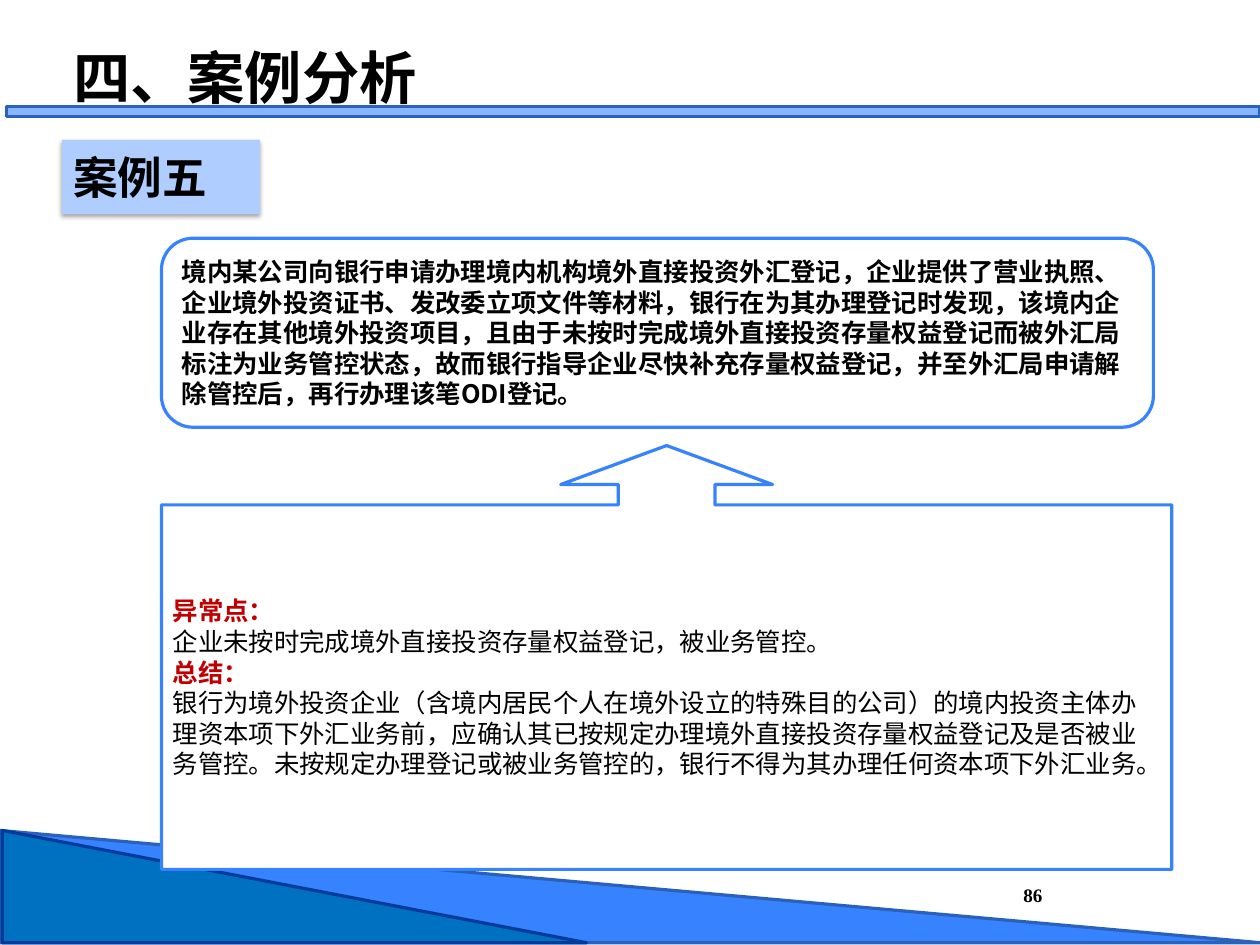
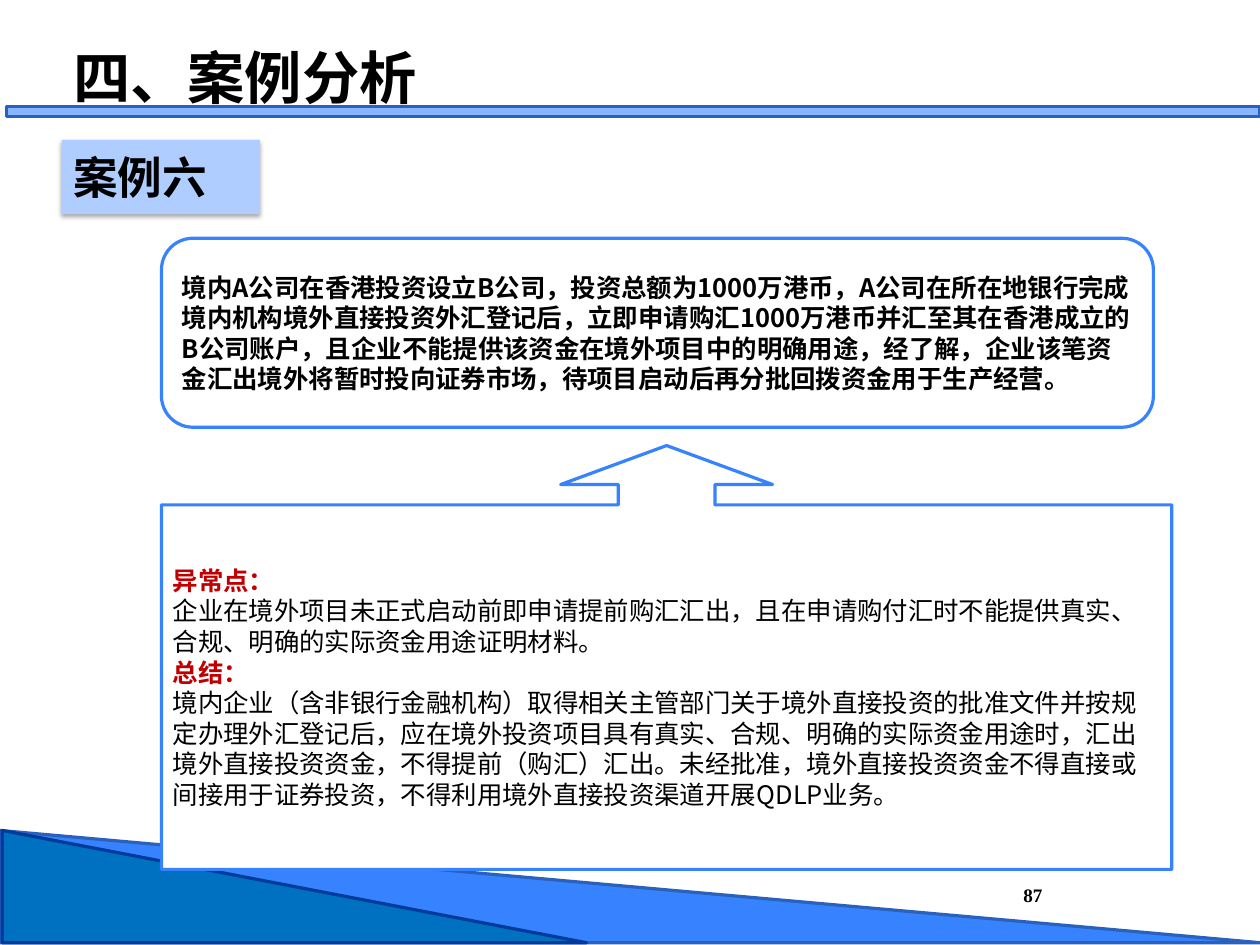
import pptx
import pptx.dml.color
import pptx.enum.shapes
import pptx.enum.text
import pptx.oxml.ns
import pptx.util
from lxml import etree

RGBColor = pptx.dml.color.RGBColor
Inches = pptx.util.Inches
Pt = pptx.util.Pt
MSO_SHAPE = pptx.enum.shapes.MSO_SHAPE
PP_ALIGN = pptx.enum.text.PP_ALIGN
MSO_ANCHOR = pptx.enum.text.MSO_ANCHOR
qn = pptx.oxml.ns.qn

BLACK = RGBColor(0x00, 0x00, 0x00)
WHITE = RGBColor(0xFF, 0xFF, 0xFF)
RED = RGBColor(0xC0, 0x00, 0x00)
BLUE = RGBColor(0x37, 0x83, 0xFF)
BLUE_EDGE = RGBColor(0x29, 0x61, 0xBD)
DEEP = RGBColor(0x00, 0x70, 0xC0)
DEEP_EDGE = RGBColor(0x00, 0x3B, 0x9B)
BAR = RGBColor(0x87, 0xB5, 0xFF)
TAG = RGBColor(0xAF, 0xCD, 0xFF)

SANS = "Noto Sans CJK SC"
SERIF = "Times New Roman"

TITLE = "四、案例分析"
CASES = [
    {
        "page": 86,
        "name": "案例五",
        "story": "境内某公司向银行申请办理境内机构境外直接投资外汇登记，企业提供了营业执照、"
                 "企业境外投资证书、发改委立项文件等材料，银行在为其办理登记时发现，该境内企"
                 "业存在其他境外投资项目，且由于未按时完成境外直接投资存量权益登记而被外汇局"
                 "标注为业务管控状态，故而银行指导企业尽快补充存量权益登记，并至外汇局申请解"
                 "除管控后，再行办理该笔ODI登记。",
        "anomaly": "企业未按时完成境外直接投资存量权益登记，被业务管控。",
        "summary": "银行为境外投资企业（含境内居民个人在境外设立的特殊目的公司）的境内投资主体办"
                   "理资本项下外汇业务前，应确认其已按规定办理境外直接投资存量权益登记及是否被业"
                   "务管控。未按规定办理登记或被业务管控的，银行不得为其办理任何资本项下外汇业"
                   "务。",
    },
    {
        "page": 87,
        "name": "案例六",
        "story": "境内A公司在香港投资设立B公司，投资总额为1000万港币，A公司在所在地银行"
                 "完成境内机构境外直接投资外汇登记后，立即申请购汇1000万港币并汇至其在香港"
                 "成立的B公司账户，且企业不能提供该资金在境外项目中的明确用途，经了解，企业"
                 "该笔资金汇出境外将暂时投向证券市场，待项目启动后再分批回拨资金用于生产经"
                 "营。",
        "anomaly": "企业在境外项目未正式启动前即申请提前购汇汇出，且在申请购付汇时不能提供真实、"
                   "合规、明确的实际资金用途证明材料。",
        "summary": "境内企业（含非银行金融机构）取得相关主管部门关于境外直接投资的批准文件并按规"
                   "定办理外汇登记后，应在境外投资项目具有真实、合规、明确的实际资金用途时，汇出"
                   "境外直接投资资金，不得提前（购汇）汇出。未经批准，境外直接投资资金不得直接或"
                   "间接用于证券投资，不得利用境外直接投资渠道开展QDLP业务。",
    },
]


class Deck:
    """Holds the shared style and the slide being built."""

    def __init__(self):
        self.prs = pptx.Presentation()
        self.prs.slide_width = Inches(11)
        self.prs.slide_height = Inches(8.25)
        self.s = None

    def new_slide(self, page):
        self.s = self.prs.slides.add_slide(self.prs.slide_layouts[6])
        self.shape(MSO_SHAPE.RIGHT_TRIANGLE, (0, 7.25, 11, 0.98), BLUE, BLUE_EDGE)
        self.shape(MSO_SHAPE.RIGHT_TRIANGLE, (0.02, 7.25, 5.1, 0.98), DEEP, DEEP_EDGE)
        self.shape(MSO_SHAPE.RECTANGLE, (0.06, 0.93, 10.94, 0.09), BAR, BLUE_EDGE)
        sp = self.text_box((8.65, 7.49, 0.45, 0.42))
        tf = sp.text_frame
        tf.margin_left = tf.margin_right = tf.margin_top = tf.margin_bottom = 0
        self.set_text(sp, [(str(page), BLACK, True)], 12, SERIF,
                      PP_ALIGN.RIGHT, MSO_ANCHOR.BOTTOM)

    def shape(self, kind, box, fill, edge=None):
        sp = self.s.shapes.add_shape(kind, *map(Inches, box))
        sp.shadow.inherit = False
        sp.fill.solid()
        sp.fill.fore_color.rgb = fill
        if edge is None:
            sp.line.fill.background()
        else:
            sp.line.color.rgb = edge
            sp.line.width = Pt(2)
        return sp

    def text_box(self, box):
        return self.s.shapes.add_textbox(*map(Inches, box))

    def set_text(self, sp, lines, size, font=SANS, align=PP_ALIGN.LEFT,
                 anchor=MSO_ANCHOR.MIDDLE):
        """Set one paragraph for each (text, colour, bold) in lines."""
        tf = sp.text_frame
        tf.word_wrap = True
        tf.vertical_anchor = anchor
        for i, (text, color, bold) in enumerate(lines):
            p = tf.add_paragraph() if i else tf.paragraphs[0]
            p.alignment = align
            r = p.add_run()
            r.text = text
            for name, value in {"size": Pt(size), "name": font, "bold": bold}.items():
                setattr(r.font, name, value)
            r.font.color.rgb = color
            etree.SubElement(r._r.get_or_add_rPr(), qn("a:ea"), typeface=font)

    def drop_shadow(self, sp):
        effects = sp._element.spPr.find(qn("a:effectLst"))
        shadow = etree.SubElement(effects, qn("a:outerShdw"), blurRad=str(Pt(3.1)),
                                  dist=str(Pt(1.8)), dir="5400000", rotWithShape="0")
        color = etree.SubElement(shadow, qn("a:srgbClr"), val=str(BLACK))
        etree.SubElement(color, qn("a:alpha"), val="35000")

    def tag(self, name):
        sp = self.shape(MSO_SHAPE.RECTANGLE, (0.54, 1.22, 1.73, 0.65), TAG)
        self.drop_shadow(sp)
        self.set_text(sp, [(name, BLACK, True)], 28)

    def title(self, text):
        self.set_text(self.text_box((0.54, 0.35, 6.54, 0.63)), [(text, BLACK, True)], 36)

    def story(self, text):
        sp = self.shape(MSO_SHAPE.ROUNDED_RECTANGLE, (1.41, 2.08, 8.66, 1.65), WHITE, BLUE)
        self.set_text(sp, [(text, BLACK, True)], 16)

    def findings(self, sections):
        """Draw the callout with a red heading above each section."""
        sp = self.shape(MSO_SHAPE.UP_ARROW_CALLOUT, (1.41, 3.89, 8.82, 3.7), WHITE, BLUE)
        for i, value in enumerate((0.228, 0.25, 0.092, 0.86)):
            sp.adjustments[i] = value
        lines = []
        for heading, body in sections:
            lines += [(heading, RED, True), (body, BLACK, False)]
        self.set_text(sp, lines, 16)


def main():
    deck = Deck()
    for case in CASES:
        deck.new_slide(case["page"])
        deck.tag(case["name"])
        deck.title(TITLE)
        deck.story(case["story"])
        deck.findings([("异常点：", case["anomaly"]), ("总结：", case["summary"])])
    deck.prs.save("out.pptx")


if __name__ == "__main__":
    main()
